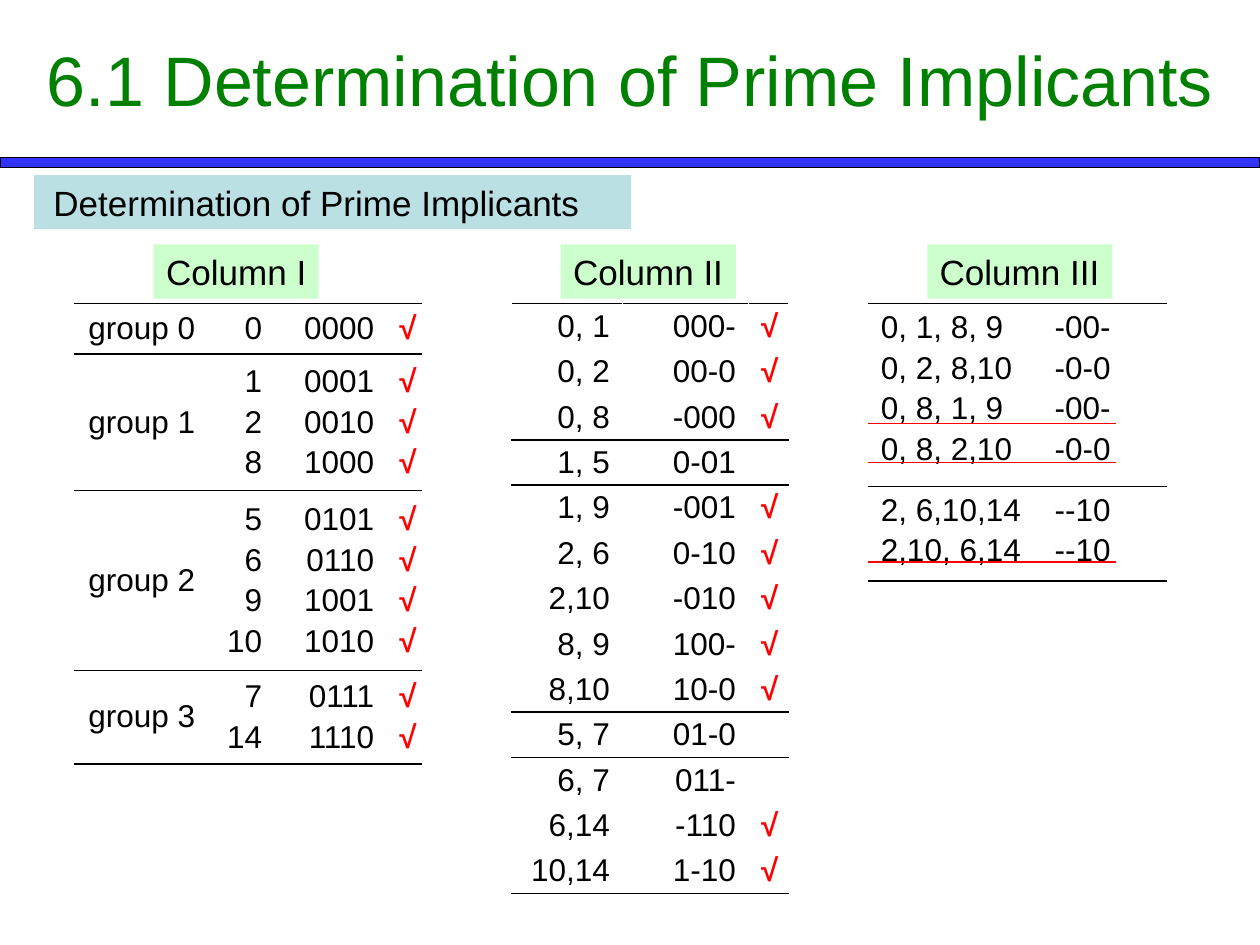
"""Build the prime implicants slide with its three column tables."""
import pptx
import pptx.util
import pptx.dml.color
import pptx.enum.shapes
import pptx.enum.text
import pptx.oxml
import pptx.oxml.ns
import lxml.etree

Inches, Pt = pptx.util.Inches, pptx.util.Pt
RGBColor = pptx.dml.color.RGBColor
ALIGN = pptx.enum.text.PP_ALIGN
MIDDLE = pptx.enum.text.MSO_ANCHOR.MIDDLE
TOP = pptx.enum.text.MSO_ANCHOR.TOP
RECT = pptx.enum.shapes.MSO_SHAPE.RECTANGLE
LINE = pptx.enum.shapes.MSO_CONNECTOR.STRAIGHT

BLACK = RGBColor(0, 0, 0)
WHITE = RGBColor(255, 255, 255)
RED = RGBColor(255, 0, 0)
GREEN = RGBColor(0, 128, 0)
BLUE = RGBColor(0x33, 0x33, 0xFF)
TEAL = RGBColor(0xBB, 0xE0, 0xE3)
MINT = RGBColor(0xCC, 0xFF, 0xCC)
PLAIN = "{2D5ABB26-0587-4C30-8999-92F81FD0307C}"
MARK = "√"


def add_run(para, text, size, color=BLACK, face="Arial"):
    run = para.add_run()
    run.text = text
    run.font.size = Pt(size)
    run.font.name = face
    run.font.color.rgb = color
    run.font.bold = text == MARK


def add_box(x, y, w, h, fill):
    box = slide.shapes.add_shape(RECT, Inches(x), Inches(y), Inches(w), Inches(h))
    box.shadow.inherit = False
    box.fill.solid()
    box.fill.fore_color.rgb = fill
    box.line.fill.background()
    box.text_frame.paragraphs[0].alignment = ALIGN.LEFT
    return box


deck = pptx.Presentation()
deck.slide_width, deck.slide_height = Inches(10), Inches(7.5)
slide = deck.slides.add_slide(deck.slide_layouts[6])

bar = add_box(0, 1.25, 10, 0.08, BLUE)
bar.line.color.rgb = BLACK
bar.line.width = Pt(0.75)

title = slide.shapes.add_textbox(0, 0, Inches(10), Inches(1.25)).text_frame
title.word_wrap = True
title.vertical_anchor = MIDDLE
title.paragraphs[0].alignment = ALIGN.CENTER
add_run(title.paragraphs[0], "6.1 Determination of Prime Implicants", 40, GREEN)

head = add_box(0.27, 1.39, 4.74, 0.43, TEAL).text_frame.paragraphs[0]
add_run(head, " ", 18, face="Noto Sans CJK KR")
add_run(head, "Determination of Prime Implicants", 20)

groups = [
    ("0", "0000"),
    ("1 2 8", "0001 0010 1000"),
    ("5 6 9 10", "0101 0110 1001 1010"),
    ("7 14", "0111 1110"),
]
singles = []
for i, (nums, codes) in enumerate(groups):
    nums, codes = nums.split(), codes.split()
    singles.append([[f"group {i}"], nums, codes, [MARK] * len(nums)])

pairs = [
    ("0, 1", "000-", MARK), ("0, 2", "00-0", MARK), ("0, 8", "-000", MARK),
    ("1, 5", "0-01", ""), ("1, 9", "-001", MARK), ("2, 6", "0-10", MARK),
    ("2,10", "-010", MARK), ("8, 9", "100-", MARK), ("8,10", "10-0", MARK),
    ("5, 7", " 01-0", ""), ("6, 7", "011-", ""), ("6,14", "-110", MARK),
    ("10,14", "1-10", MARK),
]
pairs = [[[text] for text in row] for row in pairs]

quads = [
    [["0, 1, 8, 9", "0, 2, 8,10", "0, 8, 1, 9", "0, 8, 2,10"],
     ["-00-", "-0-0", "-00-", "-0-0"]],
    [["2, 6,10,14", "2,10, 6,14"], ["--10", "--10"]],
]

left, right, mid = ALIGN.LEFT, ALIGN.RIGHT, ALIGN.CENTER
tables = [
    (0.59, [1.07, 0.52, 0.89, 0.28], [0.39, 1.05, 1.39, 0.71], singles,
     [mid, right, right, left], MIDDLE, 0.05, {0, 1, 2, 3}, ""),
    (4.06, [0.88, 1, 0.32], [0.36] * 13, pairs,
     [right] * 3, MIDDLE, 0.03, {2, 8, 12}, "LR"),
    (6.89, [1.38, 0.99], [1.45, 0.75], quads,
     [left] * 2, TOP, 0.05, {0, 1}, ""),
]
for x, wides, highs, rows, aligns, anchor, pad, ends, sides in tables:
    frame = slide.shapes.add_table(
        len(highs), len(wides), Inches(x), Inches(2.41),
        Inches(sum(wides)), Inches(sum(highs)))
    grid = frame.table
    grid.first_row = grid.horz_banding = False
    for node in frame.element.iter(pptx.oxml.ns.qn("a:tableStyleId")):
        node.text = PLAIN
    for c, wide in enumerate(wides):
        grid.columns[c].width = Inches(wide)
    for r, row in enumerate(rows):
        grid.rows[r].height = Inches(highs[r])
        edges = [(side, WHITE) for side in sides]
        if r == 0 or r - 1 in ends:
            edges.append(("T", BLACK))
        if r in ends:
            edges.append(("B", BLACK))
        for c, lines in enumerate(row):
            cell = grid.cell(r, c)
            cell.vertical_anchor = anchor
            cell.margin_top = cell.margin_bottom = Inches(pad)
            for side, color in edges:
                cell._tc.get_or_add_tcPr().append(pptx.oxml.parse_xml(
                    f'<a:ln{side} {pptx.oxml.ns.nsdecls("a")} w="12700"><a:solidFill>'
                    f'<a:srgbClr val="{color}"/></a:solidFill></a:ln{side}>'))
            cell.fill.background()
            for n, text in enumerate(lines):
                body = cell.text_frame
                para = body.add_paragraph() if n else body.paragraphs[0]
                para.alignment = aligns[c]
                para.space_before = Pt(3)
                if text:
                    add_run(para, text, 18, RED if text == MARK else BLACK)

for x, wide, name in [(1.22, 1.31, "I"), (4.45, 1.39, "II"), (7.36, 1.47, "III")]:
    label = add_box(x, 1.94, wide, 0.43, MINT).text_frame
    label.word_wrap = False
    add_run(label.paragraphs[0], f"Column {name}", 20)

for y in (3.36, 3.67, 4.46):
    strike = slide.shapes.add_connector(
        LINE, Inches(6.89), Inches(y), Inches(8.86), Inches(y))
    strike.line.color.rgb = RED
    strike.line.width = Pt(0.75)
    lxml.etree.SubElement(
        strike.element.spPr, pptx.oxml.ns.qn("a:effectLst"))

deck.save("out.pptx")
